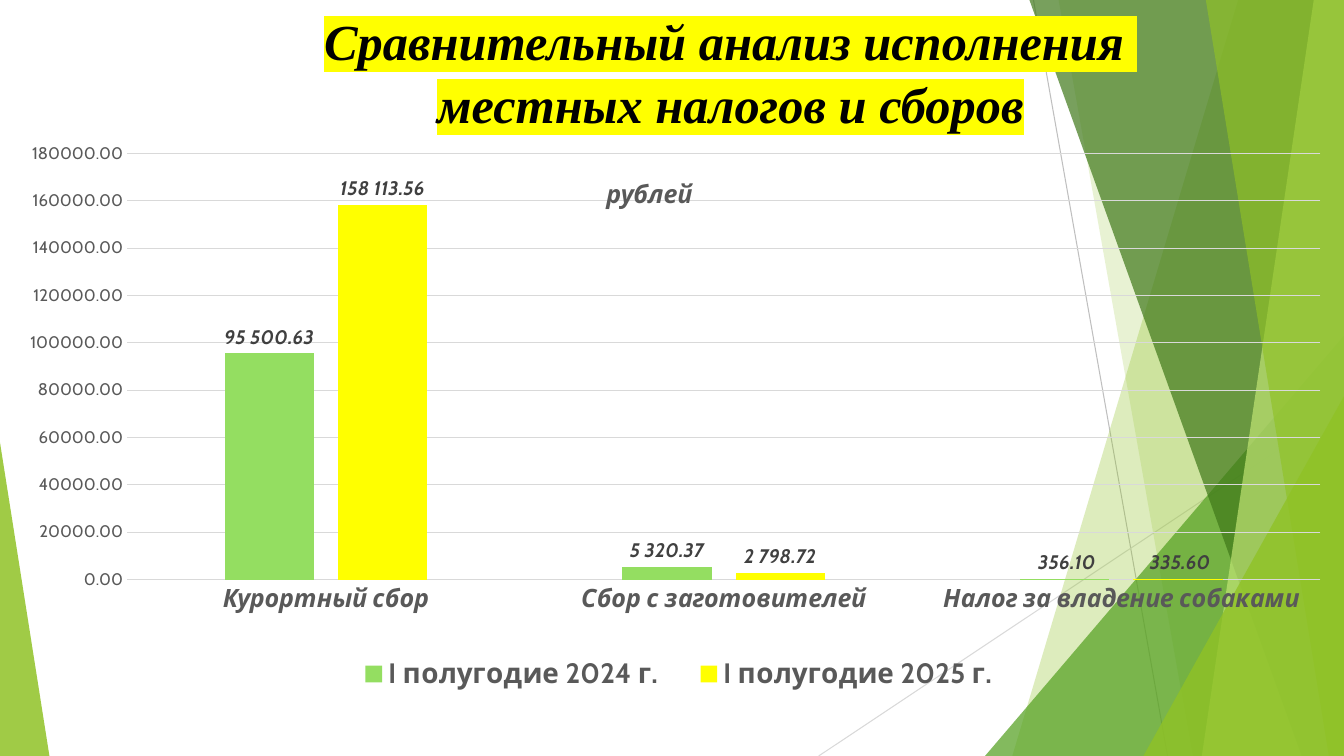
from dataclasses import dataclass

from lxml.etree import SubElement
from pptx import Presentation
from pptx.chart.data import CategoryChartData
from pptx.dml.color import RGBColor
from pptx.enum.chart import XL_CHART_TYPE, XL_LABEL_POSITION, XL_LEGEND_POSITION, XL_TICK_MARK
from pptx.enum.shapes import MSO_CONNECTOR, MSO_SHAPE
from pptx.enum.text import MSO_ANCHOR, MSO_AUTO_SIZE, PP_ALIGN
from pptx.oxml.ns import qn
from pptx.util import Inches, Pt


@dataclass(frozen=True)
class Theme:
    title_font: str = "Times New Roman"
    chart_font: str = "Cabin"
    black: str = "000000"
    gray: str = "595959"
    label_gray: str = "404040"
    grid: str = "D9D9D9"
    line: str = "BFBFBF"
    lime: str = "90C226"
    green: str = "54A021"
    dark_green: str = "3F7819"
    pale_lime: str = "C0E474"
    bar_green: str = "94DE61"
    yellow: str = "FFFF00"
    title_size: int = 36
    legend_size: int = 20
    category_size: int = 18
    label_size: int = 14
    value_size: int = 12


THEME = Theme()
WIDTH, HEIGHT = 13.33, 7.5


def color(value):
    return RGBColor.from_string(value)


def style_font(font, name, size, value, bold=False, italic=False):
    font.name = name
    font.size = Pt(size)
    font.bold = bold
    font.italic = italic
    font.color.rgb = color(value)


def fill_shape(shape, value, opacity):
    shape.shadow.inherit = False
    shape.fill.solid()
    shape.fill.fore_color.rgb = color(value)
    shape.line.fill.background()
    tint = shape.element.spPr.find(qn("a:solidFill"))[0]
    SubElement(tint, qn("a:alpha"), val=str(opacity * 1000))


def add_line(slide, start, end, value):
    points = [Inches(number) for number in start + end]
    connector = slide.shapes.add_connector(MSO_CONNECTOR.STRAIGHT, *points)
    connector.line.color.rgb = color(value)
    connector.line.width = Pt(0.75)
    SubElement(connector.element.spPr, qn("a:effectLst"))


def add_band(slide, box, top_left, top_right, bottom_left, value, opacity):
    left, top, width, height = box
    right, bottom = left + width, top + height
    corners = [(top_left, top), (top_right, top), (right, top), (right, bottom), (bottom_left, bottom)]
    points = [(Inches(x), Inches(y)) for x, y in corners]
    builder = slide.shapes.build_freeform(*points[0], scale=1.0)
    builder.add_line_segments(points[1:], close=True)
    fill_shape(builder.convert_to_shape(), value, opacity)


def add_triangle(slide, box, apex, value, opacity):
    shape = slide.shapes.add_shape(MSO_SHAPE.ISOSCELES_TRIANGLE, *map(Inches, box))
    shape.adjustments[0] = apex
    fill_shape(shape, value, opacity)


def add_backdrop(slide, box):
    left, top, width, height = box
    right, bottom = left + width, top + height

    def band(inset_left, inset_right, inset_bottom, value, opacity):
        add_band(slide, box, right - inset_left, right - inset_right, right - inset_bottom, value, opacity)

    def corner(corner_width, corner_height, value, opacity):
        corner_box = (right - corner_width, bottom - corner_height, corner_width, corner_height)
        add_triangle(slide, corner_box, 1, value, opacity)

    add_line(slide, (right - 3.08, top), (right - 1.75, bottom), THEME.line)
    add_line(slide, (right, top + 4.03), (right - 5.21, bottom), THEME.grid)
    band(1.05, 0, 3.29, THEME.lime, 30)
    band(2.83, 0, 1.5, THEME.lime, 20)
    corner(3.56, 4.17, THEME.green, 72)
    band(3.12, 0, 0.42, THEME.dark_green, 70)
    band(0.3, 0, 1.41, THEME.pale_lime, 70)
    band(1.37, 0, 0.15, THEME.lime, 65)
    corner(1.99, 3.57, THEME.lime, 80)
    add_triangle(slide, (left, bottom - 3.11, 0.49, 3.11), 0, THEME.lime, 85)


def add_title(slide, box):
    title = slide.shapes.title
    title.left, title.top, title.width, title.height = map(Inches, box)
    title.element.getparent().append(title.element)
    text_frame = title.text_frame
    text_frame.text = "Сравнительный анализ исполнения \vместных налогов и сборов"
    text_frame.word_wrap = True
    text_frame.auto_size = MSO_AUTO_SIZE.NONE
    text_frame.vertical_anchor = MSO_ANCHOR.TOP
    text_frame.margin_top = Inches(0.08)
    paragraph = text_frame.paragraphs[0]
    paragraph.alignment = PP_ALIGN.CENTER
    paragraph.line_spacing = 1.04
    for run in paragraph.runs:
        style_font(run.font, THEME.title_font, THEME.title_size, THEME.black, True, True)
        properties = run.font.fill._xPr
        highlight = SubElement(properties, qn("a:highlight"))
        SubElement(highlight, qn("a:srgbClr"), val=THEME.yellow)
        properties.find(qn("a:solidFill")).addnext(highlight)


def set_layout(element, index, inner=False, **fractions):
    for old_layout in element.findall(qn("c:layout")):
        element.remove(old_layout)
    layout = SubElement(element, qn("c:layout"))
    element.insert(index, layout)
    manual = SubElement(layout, qn("c:manualLayout"))
    if inner:
        SubElement(manual, qn("c:layoutTarget"), val="inner")
    for name in ("x", "y"):
        SubElement(manual, qn(f"c:{name}Mode"), val="edge")
    for name, fraction in fractions.items():
        SubElement(manual, qn(f"c:{name}"), val=str(fraction))


def style_axes(chart):
    category_axis, value_axis = chart.category_axis, chart.value_axis
    style_font(category_axis.tick_labels.font, THEME.chart_font, THEME.category_size, THEME.gray, True, True)
    style_font(value_axis.tick_labels.font, THEME.chart_font, THEME.value_size, THEME.gray)
    for axis in (category_axis, value_axis):
        axis.major_tick_mark = axis.minor_tick_mark = XL_TICK_MARK.NONE
    value_axis.minimum_scale, value_axis.maximum_scale, value_axis.major_unit = 0, 180000, 20000
    value_axis.tick_labels.number_format = "0.00"
    value_axis.tick_labels.number_format_is_linked = False
    value_axis.format.line.fill.background()
    value_axis.has_major_gridlines = True
    for line in (category_axis.format.line, value_axis.major_gridlines.format.line):
        line.color.rgb = color(THEME.grid)
        line.width = Pt(0.75)


def add_tax_chart(slide, box):
    data = CategoryChartData(number_format="0.00")
    data.categories = ["Курортный сбор", "Сбор с заготовителей", "Налог за владение собаками"]
    data.add_series("I полугодие 2024 г.", (95500.63, 5320.37, 356.1))
    data.add_series("I полугодие 2025 г.", (158113.56, 2798.72, 335.6))
    chart = slide.shapes.add_chart(XL_CHART_TYPE.COLUMN_CLUSTERED, *map(Inches, box), data).chart
    style_font(chart.font, THEME.chart_font, 10, THEME.black)
    style_axes(chart)

    plot = chart.plots[0]
    plot.gap_width, plot.overlap = 219, -27
    plot.vary_by_categories = False
    for series, value in zip(plot.series, (THEME.bar_green, THEME.yellow)):
        series.format.fill.solid()
        series.format.fill.fore_color.rgb = color(value)
        series.invert_if_negative = False
        labels = series.data_labels
        labels.show_value = True
        labels.position = XL_LABEL_POSITION.OUTSIDE_END
        labels.number_format = '#" "##0.00'
        labels.number_format_is_linked = False
        style_font(labels.font, THEME.chart_font, THEME.label_size, THEME.label_gray, True, True)

    chart.has_title = True
    text_frame = chart.chart_title.text_frame
    text_frame.text = "рублей"
    run = text_frame.paragraphs[0].runs[0]
    style_font(run.font, THEME.chart_font, THEME.category_size, THEME.gray, True, True)

    chart.has_legend = True
    chart.legend.position = XL_LEGEND_POSITION.BOTTOM
    chart.legend.include_in_layout = False
    style_font(chart.legend.font, THEME.chart_font, THEME.legend_size, THEME.gray, True)

    chart_root = chart.element.find(qn("c:chart"))
    set_layout(chart_root.find(qn("c:title")), 1, x=0.44, y=0.08)
    set_layout(chart_root.find(qn("c:plotArea")), 0, inner=True, x=0.07, y=0.05, w=0.93, h=0.7)
    set_layout(chart_root.find(qn("c:legend")), 1, x=0.23, y=0.86, w=0.54, h=0.09)


def main():
    presentation = Presentation()
    presentation.slide_width, presentation.slide_height = Inches(WIDTH), Inches(HEIGHT)
    slide = presentation.slides.add_slide(presentation.slide_layouts[5])
    add_backdrop(slide, (0, 0, WIDTH, HEIGHT))
    add_title(slide, (1.66, 0, 11.17, 1.61))
    add_tax_chart(slide, (0.3, 1.22, 12.8, 6.04))
    presentation.save("out.pptx")


if __name__ == "__main__":
    main()
